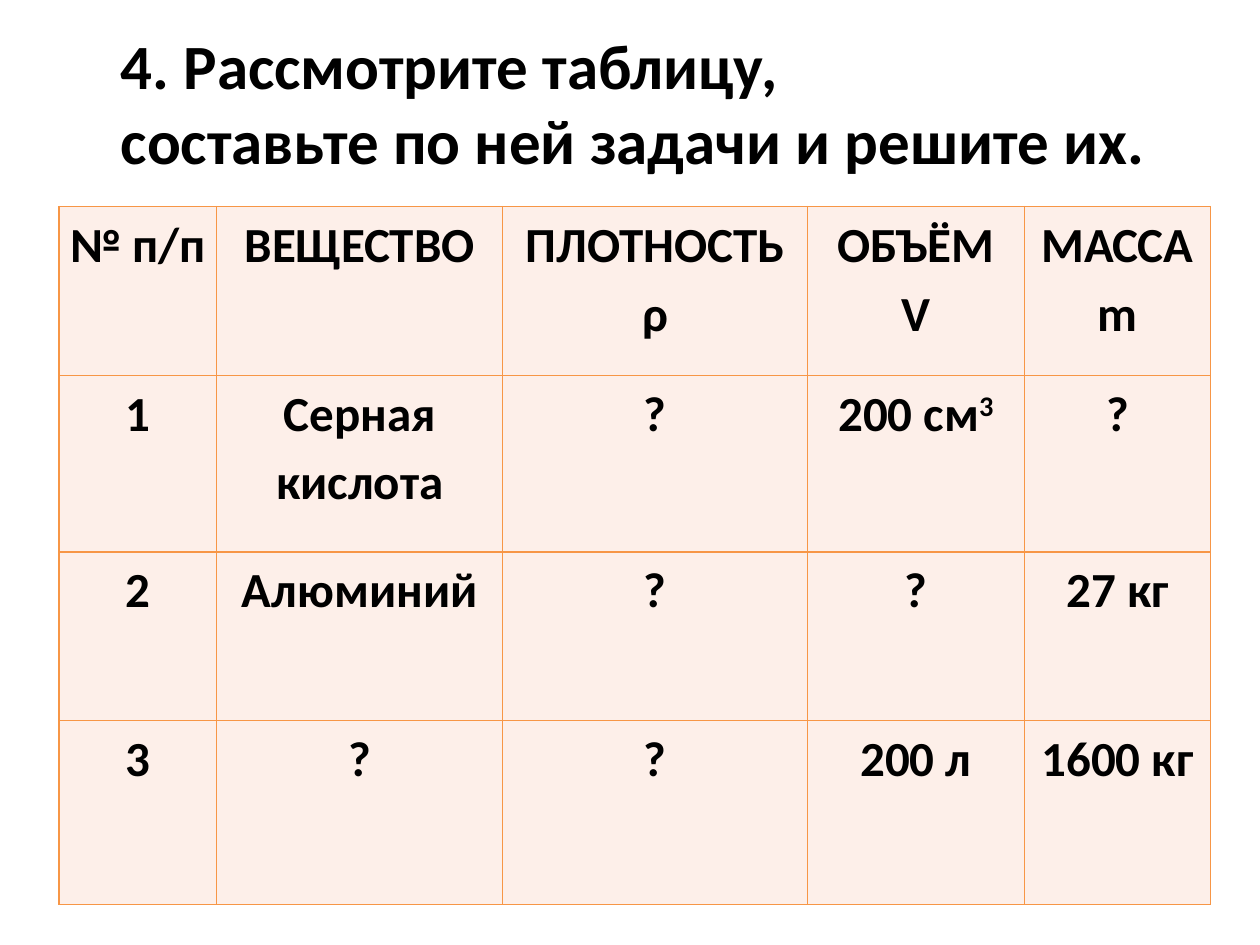
from pptx import Presentation
from pptx.dml.color import RGBColor
from pptx.enum.text import MSO_ANCHOR, MSO_AUTO_SIZE, PP_ALIGN
from pptx.oxml import parse_xml
from pptx.oxml.ns import nsdecls
from pptx.util import Inches, Pt

BLACK = RGBColor(0x00, 0x00, 0x00)
ORANGE = RGBColor(0xF7, 0x96, 0x46)
PEACH = RGBColor(0xFD, 0xEF, 0xE9)

TASK = ["4. Рассмотрите таблицу,", "составьте по ней задачи и решите их."]
COLUMN_WIDTHS = [1.25, 2.27, 2.42, 1.72, 1.48]
ROW_HEIGHTS = [1.34, 1.4, 1.34, 1.46]
SUBSTANCES = [
    ["№ п/п", "ВЕЩЕСТВО", "ПЛОТНОСТЬ\nρ", "ОБЪЁМ\nV", "МАССА\nm"],
    ["1", "Серная кислота", "?", "200 см^3", "?"],
    ["2", "Алюминий", "?", "?", "27 кг"],
    ["3", "?", "?", "200 л", "1600 кг"],
]


class SlideBuilder:
    font_name = "Calibri"

    def __init__(self, slide):
        self.slide = slide

    def add_line(self, paragraph, text, size):
        base, _, power = text.partition("^")
        paragraph.add_run().text = base
        if power:
            exponent = paragraph.add_run()
            exponent.text = power
            exponent._r.get_or_add_rPr().set("baseline", "30000")
        font = paragraph.font
        font.name, font.size, font.bold = self.font_name, Pt(size), True
        font.color.rgb = BLACK

    def fill_frame(self, frame, lines, size):
        for index, line in enumerate(lines):
            paragraph = frame.add_paragraph() if index else frame.paragraphs[0]
            self.add_line(paragraph, line, size)

    def heading(self, lines, left, top, width, height):
        box = self.slide.shapes.add_textbox(
            Inches(left), Inches(top), Inches(width), Inches(height))
        frame = box.text_frame
        frame.word_wrap = False
        frame.auto_size = MSO_AUTO_SIZE.SHAPE_TO_FIT_TEXT
        self.fill_frame(frame, lines, 36)

    def cell(self, cell, text):
        cell.margin_left = cell.margin_right = Inches(0.07)
        cell.margin_top = cell.margin_bottom = 0
        cell.vertical_anchor = MSO_ANCHOR.TOP
        self.fill_frame(cell.text_frame, text.split("\n"), 28)
        for paragraph in cell.text_frame.paragraphs:
            paragraph.alignment = PP_ALIGN.CENTER
            paragraph.line_spacing = 1.15
        cell.fill.solid()
        cell.fill.fore_color.rgb = PEACH
        properties = cell._tc.get_or_add_tcPr()
        for position, side in enumerate("LRTB"):
            properties.insert(position, parse_xml(
                f'<a:ln{side} {nsdecls("a")} w="{Pt(1)}"><a:solidFill>'
                f'<a:srgbClr val="{ORANGE}"/></a:solidFill></a:ln{side}>'))

    def table(self, rows, left, top, widths, heights):
        table = self.slide.shapes.add_table(
            len(rows), len(widths), Inches(left), Inches(top),
            Inches(sum(widths)), Inches(sum(heights))).table
        table.first_row = table.horz_banding = False
        for column, width in zip(table.columns, widths):
            column.width = Inches(width)
        for row, height, texts in zip(table.rows, heights, rows):
            row.height = Inches(height)
            for cell, text in zip(row.cells, texts):
                self.cell(cell, text)


def main():
    deck = Presentation()
    deck.slide_width, deck.slide_height = Inches(10), Inches(7.5)
    builder = SlideBuilder(deck.slides.add_slide(deck.slide_layouts[6]))
    builder.table(SUBSTANCES, 0.47, 1.64, COLUMN_WIDTHS, ROW_HEIGHTS)
    builder.heading(TASK, 0.86, 0.16, 8.41, 1.62)
    deck.save("out.pptx")


if __name__ == "__main__":
    main()
